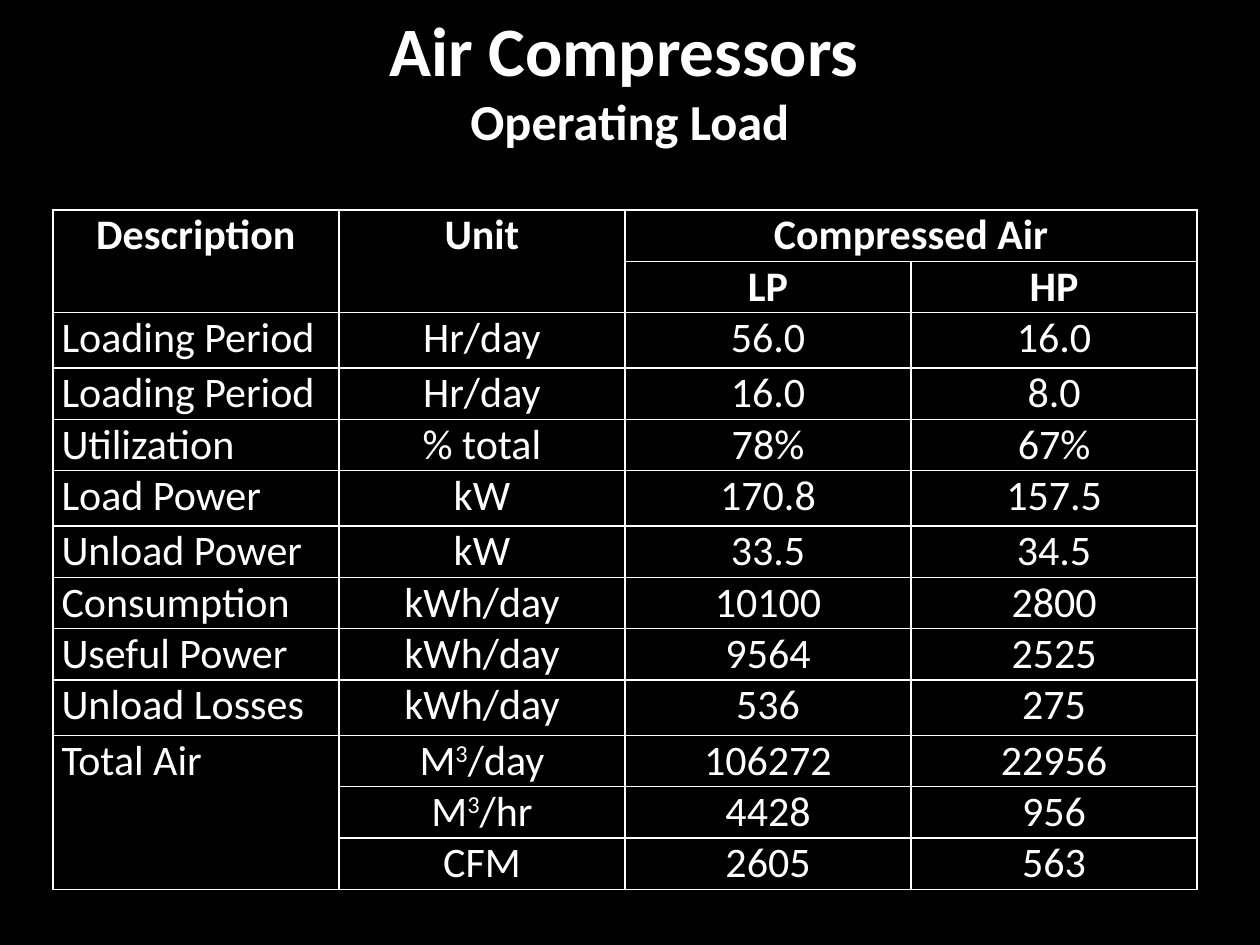
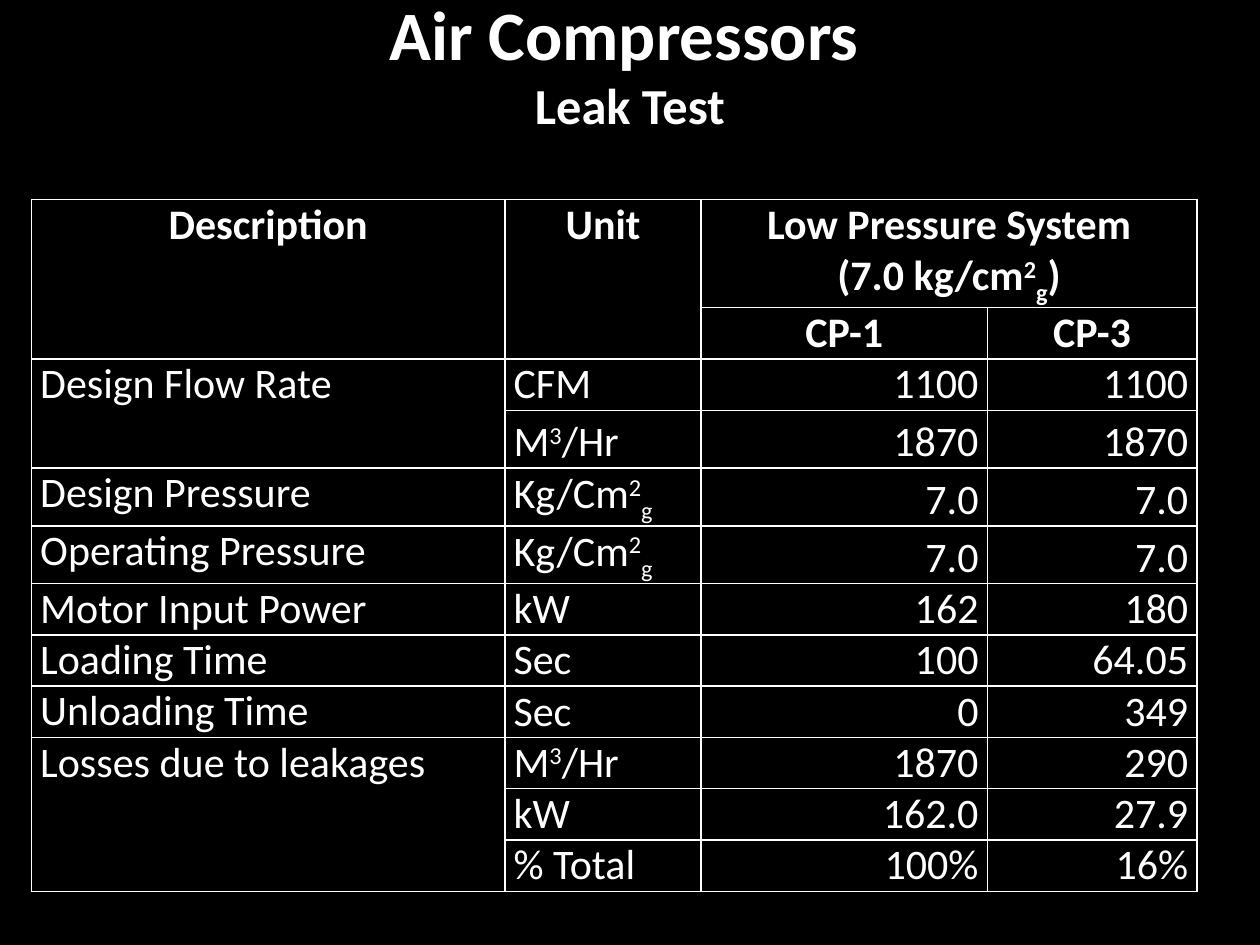
from lxml.etree import SubElement
from pptx import Presentation
from pptx.dml.color import RGBColor
from pptx.enum.text import MSO_ANCHOR as ANCHOR, MSO_AUTO_SIZE as AUTO_SIZE, PP_ALIGN as ALIGN
from pptx.oxml.ns import qn
from pptx.util import Pt

COLORS = {"background": "000000", "text": "FFFFFF", "border": "FFFFFF"}
FONT = "Calibri"
TITLE_SIZE, SUBTITLE_SIZE, TABLE_SIZE = 39.6, 28.8, 24
HEADER_ROWS = 2
ROW = 29.3
BASELINES = {"^": "30000", "_": "-25000"}


def write_text(paragraph, text, size=TABLE_SIZE, bold=False, align=ALIGN.LEFT):
    """Add runs split at "|"; a piece led by ^ is superscript, by _ subscript."""
    paragraph.alignment = align
    for piece in text.split("|"):
        baseline = BASELINES.get(piece[0])
        run = paragraph.add_run()
        run.text = piece[1:] if baseline else piece
        run.font.name = FONT
        run.font.size = Pt(size)
        run.font.bold = bold
        run.font.color.rgb = RGBColor.from_string(COLORS["text"])
        if baseline:
            run.font._element.set("baseline", baseline)


def style_cell(cell, anchor):
    cell.margin_left = cell.margin_right = Pt(5)
    cell.margin_top = cell.margin_bottom = 0
    cell.vertical_anchor = anchor
    properties = cell._tc.get_or_add_tcPr()
    for side in ("a:lnL", "a:lnR", "a:lnT", "a:lnB"):
        line = SubElement(properties, qn(side), w=str(Pt(1)))
        fill = SubElement(line, qn("a:solidFill"))
        SubElement(fill, qn("a:srgbClr"), val=COLORS["border"])
    cell.fill.background()


# Merges are (first row, first column, last row, last column).
header_merges = [(0, 0, 1, 0), (0, 1, 1, 1), (0, 2, 0, 3)]
slides = [
    {
        "subtitle": "Operating Load",
        "title_height": 90,
        "position": (30.2, 120),
        "columns": [163.5] * 4,
        "tall_rows": {2: 31.7, 5: 31.7, 9: 31.7},
        "merges": header_merges + [(10, 0, 12, 0)],
        "aligns": [ALIGN.LEFT, ALIGN.CENTER, ALIGN.CENTER, ALIGN.CENTER],
        "value_anchor": ANCHOR.TOP,
        "rows": [
            ["Description", "Unit", "Compressed Air", ""],
            ["", "", "LP", "HP"],
            ["Loading Period", "Hr/day", "56.0", "16.0"],
            ["Loading Period", "Hr/day", "16.0", "8.0"],
            ["Utilization", "% total", "78%", "67%"],
            ["Load Power", "kW", "170.8", "157.5"],
            ["Unload Power", "kW", "33.5", "34.5"],
            ["Consumption", "kWh/day", "10100", "2800"],
            ["Useful Power", "kWh/day", "9564", "2525"],
            ["Unload Losses", "kWh/day", "536", "275"],
            ["Total Air", "M|^3|/day", "106272", "22956"],
            ["", "M|^3|/hr", "4428", "956"],
            ["", "CFM", "2605", "563"],
        ],
    },
    {
        "subtitle": "Leak Test",
        "title_height": 72,
        "position": (18, 114),
        "columns": [270.5, 112.2, 163.5, 119.8],
        "tall_rows": {0: 61.7, 3: 33, 4: 33, 5: 33},
        "merges": header_merges + [(2, 0, 3, 0), (9, 0, 11, 0)],
        "aligns": [ALIGN.LEFT, ALIGN.LEFT, ALIGN.RIGHT, ALIGN.RIGHT],
        "value_anchor": ANCHOR.BOTTOM,
        "rows": [
            ["Description", "Unit", "Low Pressure System\n(7.0 kg/cm|^2|_g|)", ""],
            ["", "", "CP-1", "CP-3"],
            ["Design Flow Rate", "CFM", "1100", "1100"],
            ["", "M|^3|/Hr", "1870", "1870"],
            ["Design Pressure", "Kg/Cm|^2|_g", "7.0", "7.0"],
            ["Operating Pressure", "Kg/Cm|^2|_g", "7.0", "7.0"],
            ["Motor Input Power", "kW", "162", "180"],
            ["Loading Time", "Sec", "100", "64.05"],
            ["Unloading Time", "Sec", "0", "349"],
            ["Losses due to leakages", "M|^3|/Hr", "1870", "290"],
            ["", "kW", "162.0", "27.9"],
            ["", "% Total", "100%", "16%"],
        ],
    },
]

presentation = Presentation()
presentation.slide_width, presentation.slide_height = Pt(720), Pt(540)
background = presentation.slide_master.background.fill
background.solid()
background.fore_color.rgb = RGBColor.from_string(COLORS["background"])
title_only = presentation.slide_layouts.get_by_name("Title Only")

for content in slides:
    slide = presentation.slides.add_slide(title_only)

    title = slide.shapes.title
    title.left, title.top = 0, 0
    title.width, title.height = Pt(720), Pt(content["title_height"])
    title.text_frame.auto_size = AUTO_SIZE.NONE
    title.text_frame.vertical_anchor = ANCHOR.MIDDLE
    heading = title.text_frame.paragraphs[0]
    write_text(heading, "Air Compressors", size=TITLE_SIZE, bold=True, align=ALIGN.CENTER)
    write_text(heading, " ", size=SUBTITLE_SIZE, bold=True, align=ALIGN.CENTER)
    heading.add_line_break()
    line_break = heading._p.find(qn("a:br"))
    SubElement(line_break, qn("a:rPr"), sz=str(int(SUBTITLE_SIZE * 100)))
    write_text(heading, content["subtitle"], size=SUBTITLE_SIZE, bold=True, align=ALIGN.CENTER)

    rows, columns = content["rows"], content["columns"]
    heights = [content["tall_rows"].get(index, ROW) for index in range(len(rows))]
    left, top = content["position"]
    table = slide.shapes.add_table(
        len(rows), len(columns), Pt(left), Pt(top), Pt(sum(columns)), Pt(sum(heights))
    ).table
    table.first_row = table.horz_banding = False
    for column, width in zip(table.columns, columns):
        column.width = Pt(width)
    for row, height in zip(table.rows, heights):
        row.height = Pt(height)

    for row_index, row in enumerate(rows):
        is_header = row_index < HEADER_ROWS
        for column_index, text in enumerate(row):
            cell = table.cell(row_index, column_index)
            is_value = column_index > 0 and not is_header
            style_cell(cell, content["value_anchor"] if is_value else ANCHOR.TOP)
            if not text:
                continue
            align = ALIGN.CENTER if is_header else content["aligns"][column_index]
            for line_index, line in enumerate(text.split("\n")):
                frame = cell.text_frame
                paragraph = frame.add_paragraph() if line_index else frame.paragraphs[0]
                write_text(paragraph, line, bold=is_header, align=align)

    for first_row, first_column, last_row, last_column in content["merges"]:
        table.cell(first_row, first_column).merge(table.cell(last_row, last_column))

presentation.save("out.pptx")
